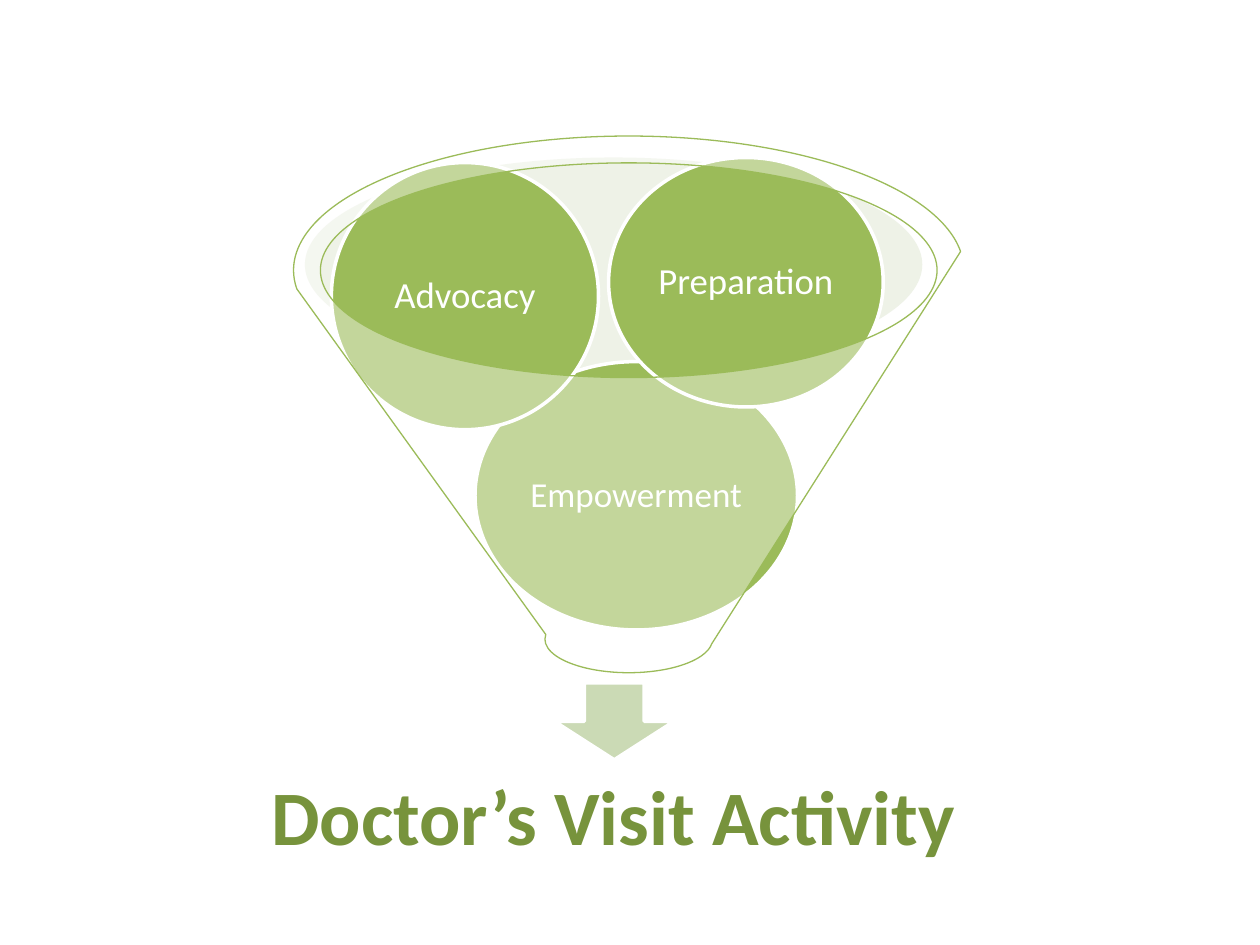
from lxml import etree
from pptx import Presentation
from pptx.dml.color import RGBColor
from pptx.enum.shapes import MSO_SHAPE
from pptx.enum.text import MSO_ANCHOR, MSO_AUTO_SIZE, PP_ALIGN
from pptx.oxml.ns import qn
from pptx.util import Inches, Pt

# Content: label, text size, (left, top, width, height)
INGREDIENTS = [
    ("Empowerment", 20, (3.77, 2.87, 2.56, 2.13)),
    ("Advocacy", 21, (2.63, 1.29, 2.12, 2.12)),
    ("Preparation", 21, (4.83, 1.25, 2.18, 1.98)),
]
OUTCOME = ("Doctor’s Visit Activity", 44, (1.15, 5.94, 7.44, 1.14))
BACK_RIM_BOX = (2.42, 1.25, 4.9, 1.7)
ARROW_BOX = (4.4, 5.42, 0.95, 0.61)
FUNNEL_BOX = (2.33, 1.08, 5.32, 4.26)

COLOURS = {
    "white": "FFFFFF",
    "green": "9BBB59",
    "dark green": "77933C",
    "rim": "D5E0C4",
    "arrow": "CBDAB5",
}
FONT = "Calibri"


def colour(name):
    return RGBColor.from_string(COLOURS[name])


def add_part(kind, box, fill, line=None, line_width=2, opacity=None):
    part = slide.shapes.add_shape(kind, *map(Inches, box))
    part.shadow.inherit = False
    part.fill.solid()
    part.fill.fore_color.rgb = colour(fill)
    if opacity is not None:
        fill_colour = part.fill._xPr.find(qn("a:solidFill"))[0]
        etree.SubElement(fill_colour, qn("a:alpha"), val=str(opacity * 1000))
    if line:
        part.line.color.rgb = colour(line)
        part.line.width = Pt(line_width)
    else:
        part.line.fill.background()
    return part


def write(part, text, size, ink, inset, bold=False):
    frame = part.text_frame
    frame.word_wrap = True
    frame.auto_size = MSO_AUTO_SIZE.NONE
    frame.vertical_anchor = MSO_ANCHOR.MIDDLE
    frame.margin_left = frame.margin_right = Inches(inset)
    frame.margin_top = frame.margin_bottom = Inches(inset)
    paragraph = frame.paragraphs[0]
    paragraph.alignment = PP_ALIGN.CENTER
    paragraph.line_spacing = 0.9
    run = paragraph.add_run()
    run.text = text
    run.font.name = FONT
    run.font.size = Pt(size)
    run.font.bold = bold
    run.font.color.rgb = colour(ink)


presentation = Presentation()
presentation.slide_width = Inches(10)
presentation.slide_height = Inches(7.5)
slide = presentation.slides.add_slide(presentation.slide_layouts[5])

# Outcome below the funnel
outcome, outcome_size, outcome_box = OUTCOME
title = slide.shapes.title
title.left, title.top, title.width, title.height = map(Inches, outcome_box)
write(title, outcome, outcome_size, "dark green", 0.34, bold=True)

# Back rim and arrow
add_part(MSO_SHAPE.OVAL, BACK_RIM_BOX, "rim", opacity=40)
add_part(MSO_SHAPE.DOWN_ARROW, ARROW_BOX, "arrow", "white")

# Ingredients inside the funnel
for label, size, box in INGREDIENTS:
    ball = add_part(MSO_SHAPE.OVAL, box, "green", "white")
    write(ball, label, size, "white", 0.03)

# Translucent funnel in front
add_part(MSO_SHAPE.FUNNEL, FUNNEL_BOX, "white", "green", 0.75, opacity=40)

presentation.save("out.pptx")
